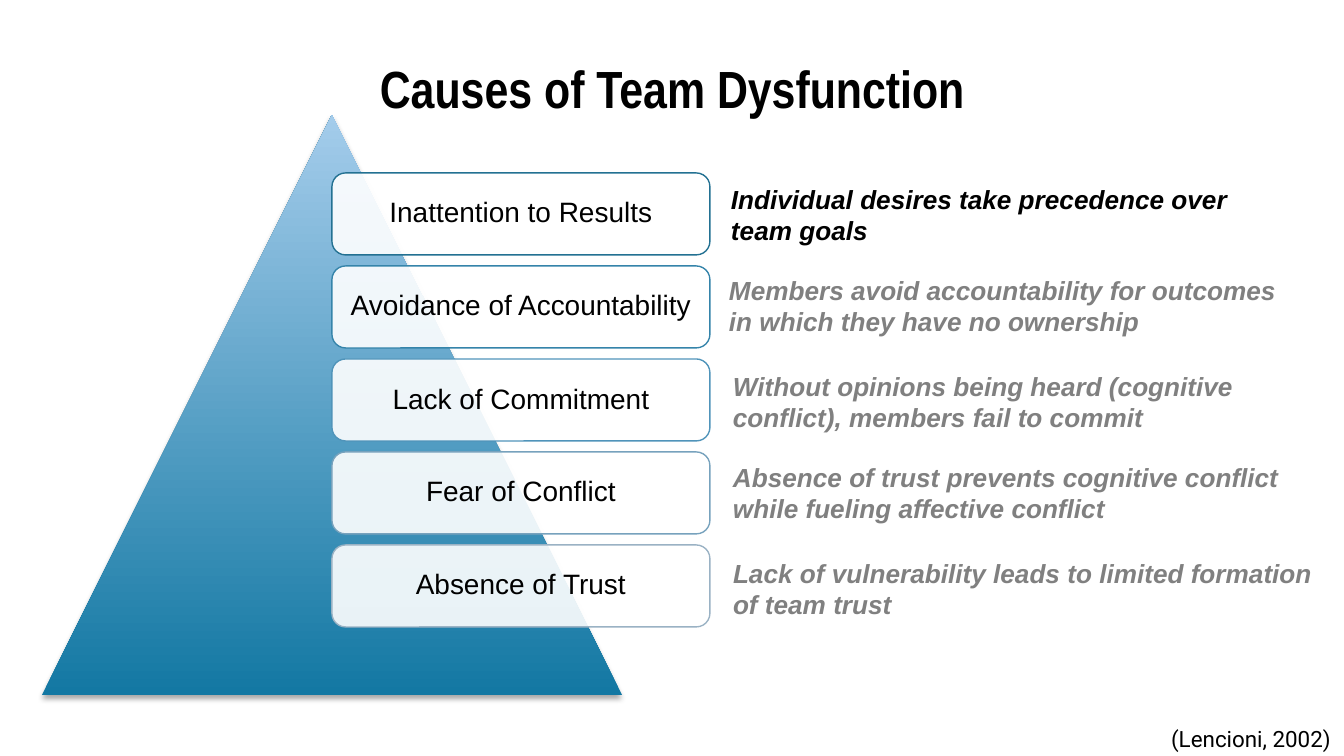
"""Builds a slide showing the five causes of team dysfunction beside a pyramid."""
from lxml.etree import SubElement
from pptx import Presentation
from pptx.dml.color import RGBColor
from pptx.enum.shapes import MSO_SHAPE as Shape
from pptx.enum.text import MSO_ANCHOR as Anchor, MSO_AUTO_SIZE as AutoSize, PP_ALIGN as Align
from pptx.oxml.ns import qn
from pptx.util import Emu, Pt

TITLE = "Causes of Team Dysfunction"
CITATION = "(Lencioni, 2002)"
CAUSES = [
    ("Inattention to Results", "237192", "black", (718, 176, 526),
     ["Individual desires take precedence over", "team goals"]),
    ("Avoidance of Accountability", "3584AA", "gray", (716, 267, 576),
     ["Members avoid accountability for outcomes", "in which they have no ownership"]),
    ("Lack of Commitment", "5094BA", "gray", (720, 363, 530),
     ["Without opinions being heard (cognitive", "conflict), members fail to commit"]),
    ("Fear of Conflict", "77A2BD", "gray", (720, 454, 574),
     ["Absence of trust prevents cognitive conflict", "while fueling affective conflict"]),
    ("Absence of Trust", "9AB2C4", "gray", (720, 550, 609),
     ["Lack of vulnerability leads to limited formation", "of team trust"]),
]
COLORS = {"black": "000000", "gray": "808080", "white": "FFFFFF",
          "base": "1378A3", "peak": "A4CCEB"}
FONTS = {
    "title": {"name": "Arial Narrow", "size": Pt(28), "bold": True},
    "citation": {"name": "Roboto", "size": Pt(12)},
    "cause": {"name": "Arial", "size": Pt(15)},
    "effect": {"name": "Arial", "size": Pt(14), "bold": True, "italic": True},
}
SLIDE_SIZE = (1344, 756)
TITLE_AT = (67, 60, 1210, 55)
CITATION_AT = (956, 723, 388, 32)
PYRAMID_AT = (42, 115, 580, 580)
CAUSE_LEFT, CAUSE_TOP, CAUSE_WIDTH, CAUSE_HEIGHT, CAUSE_PITCH = 332, 173, 378, 82, 93
EFFECT_HEIGHT = 77


def px(*lengths):
    return [Emu(round(length * 9144000 / 1344)) for length in lengths]


def rgb(name):
    return RGBColor.from_string(COLORS.get(name, name))


def write(shape, lines, style, align, inset, color="black", wrap=True, spacing=None):
    frame = shape.text_frame
    layout = {"auto_size": AutoSize.NONE, "word_wrap": wrap,
              "vertical_anchor": Anchor.MIDDLE if wrap else Anchor.TOP}
    side, edge = px(*inset)
    layout |= {"margin_left": side, "margin_right": side,
               "margin_top": edge, "margin_bottom": edge}
    for key, value in layout.items():
        setattr(frame, key, value)
    frame.text = "\n".join(lines)
    for paragraph in frame.paragraphs:
        paragraph.alignment = align
        paragraph.line_spacing = spacing
        for key, value in FONTS[style].items():
            setattr(paragraph.font, key, value)
        paragraph.font.color.rgb = rgb(color)


def add_pyramid(slide):
    pyramid = slide.shapes.add_shape(Shape.ISOSCELES_TRIANGLE, *px(*PYRAMID_AT))
    pyramid.fill.gradient()
    pyramid.fill.gradient_angle = 90
    for stop, position, color in zip(pyramid.fill.gradient_stops, (0, 1), ("base", "peak")):
        stop.position = position
        stop.color.rgb = rgb(color)
    pyramid.line.fill.background()
    pyramid.shadow.inherit = False
    effects = pyramid._element.spPr.find(qn("a:effectLst"))
    shadow = SubElement(effects, qn("a:outerShdw"), blurRad=str(Pt(3.1)), dist=str(Pt(1.8)),
                        dir="5400000", rotWithShape="0")
    tint = SubElement(shadow, qn("a:srgbClr"), val=COLORS["black"])
    SubElement(tint, qn("a:alpha"), val="35000")


def add_cause(slide, row, cause, outline):
    top = CAUSE_TOP + row * CAUSE_PITCH
    box = slide.shapes.add_shape(Shape.ROUNDED_RECTANGLE,
                                 *px(CAUSE_LEFT, top, CAUSE_WIDTH, CAUSE_HEIGHT))
    box.shadow.inherit = False
    box.fill.solid()
    box.fill.fore_color.rgb = rgb("white")
    tint = box._element.spPr.find(qn("a:solidFill")).find(qn("a:srgbClr"))
    SubElement(tint, qn("a:alpha"), val="90000")
    box.line.color.rgb = rgb(outline)
    box.line.width = Pt(0.75)
    write(box, [cause], "cause", Align.CENTER, (8, 8), spacing=0.9)


def main():
    deck = Presentation()
    deck.slide_width, deck.slide_height = px(*SLIDE_SIZE)
    slide = deck.slides.add_slide(deck.slide_layouts[5])

    title = slide.shapes.title
    title.left, title.top, title.width, title.height = px(*TITLE_AT)
    write(title, [TITLE], "title", Align.CENTER, (13, 13))

    citation = slide.shapes.add_textbox(*px(*CITATION_AT))
    write(citation, [CITATION], "citation", Align.RIGHT, (13, 13))

    add_pyramid(slide)
    for row, (cause, outline, color, (left, top, width), effect_lines) in enumerate(CAUSES):
        add_cause(slide, row, cause, outline)
        effect = slide.shapes.add_textbox(*px(left, top, width, EFFECT_HEIGHT))
        write(effect, effect_lines, "effect", Align.LEFT, (13, 7), color, wrap=False)

    deck.save("out.pptx")


if __name__ == "__main__":
    main()
